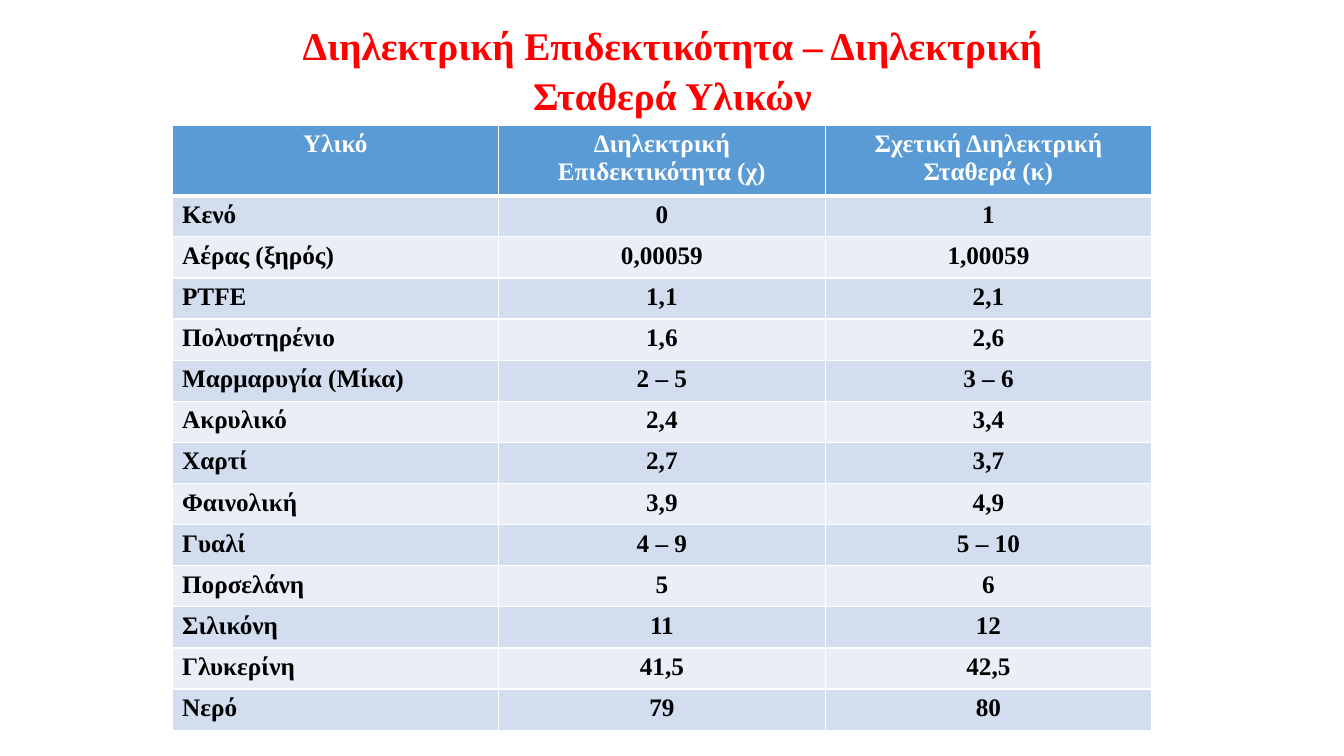
from lxml.etree import SubElement
from pptx import Presentation
from pptx.dml.color import RGBColor
from pptx.enum.text import PP_ALIGN
from pptx.oxml.ns import qn
from pptx.util import Inches, Pt

WIDTH, HEIGHT = Inches(13.33), Inches(7.5)
RED = RGBColor(0xFF, 0x00, 0x00)
BLACK = RGBColor(0x00, 0x00, 0x00)
WHITE = RGBColor(0xFF, 0xFF, 0xFF)
HEADER_BLUE = RGBColor(0x5B, 0x9B, 0xD5)
BANDS = (RGBColor(0xD2, 0xDE, 0xEF), RGBColor(0xEA, 0xEF, 0xF7))

TITLE = "Διηλεκτρική Επιδεκτικότητα – Διηλεκτρική Σταθερά Υλικών"
HEADINGS = ("Υλικό", "Διηλεκτρική Επιδεκτικότητα (χ)", "Σχετική Διηλεκτρική Σταθερά (κ)")
MATERIALS = (
    ("Κενό", "0", "1"),
    ("Αέρας (ξηρός)", "0,00059", "1,00059"),
    ("PTFE", "1,1", "2,1"),
    ("Πολυστηρένιο", "1,6", "2,6"),
    ("Μαρμαρυγία (Μίκα)", "2 – 5", "3 – 6"),
    ("Ακρυλικό", "2,4", "3,4"),
    ("Χαρτί", "2,7", "3,7"),
    ("Φαινολική", "3,9", "4,9"),
    ("Γυαλί", "4 – 9", "5 – 10"),
    ("Πορσελάνη", "5", "6"),
    ("Σιλικόνη", "11", "12"),
    ("Γλυκερίνη", "41,5", "42,5"),
    ("Νερό", "79", "80"),
)


class SlideBuilder:
    """Holds the style and the slide; lengths are percentages of the slide."""

    font_name = "Times New Roman"
    title_size, table_size = Pt(28), Pt(18)

    def __init__(self, slide):
        self.slide = slide

    def across(self, percent):
        return round(WIDTH * percent / 100)

    def down(self, percent):
        return round(HEIGHT * percent / 100)

    def style_text(self, frame, text, size, color, align):
        frame.text = text
        paragraph = frame.paragraphs[0]
        paragraph.alignment = align
        font = paragraph.runs[0].font
        font.name, font.size, font.bold = self.font_name, size, True
        font.color.rgb = color
        return paragraph

    def title(self, text, left, top, width, height):
        heading = self.slide.shapes.add_textbox(
            self.across(left), self.down(top), self.across(width), self.down(height))
        heading.text_frame.word_wrap = True
        paragraph = self.style_text(
            heading.text_frame, text, self.title_size, RED, PP_ALIGN.CENTER)
        paragraph.line_spacing = 1.07

    def borders(self, cell, bottom):
        properties = cell._tc.get_or_add_tcPr()
        sides = (("a:lnL", 1), ("a:lnR", 1), ("a:lnT", 1), ("a:lnB", bottom))
        for position, (side, points) in enumerate(sides):
            line = SubElement(properties, qn(side), w=str(Pt(points)))
            SubElement(SubElement(line, qn("a:solidFill")), qn("a:srgbClr"), val=str(WHITE))
            properties.insert(position, line)

    def table(self, headings, records, left, top, width, header_height, row_height):
        rows = (headings, *records)
        height = header_height + row_height * len(records)
        grid = self.slide.shapes.add_table(
            len(rows), len(headings), self.across(left), self.down(top),
            self.across(width), self.down(height)).table
        for r, values in enumerate(rows):
            is_header = r == 0
            grid.rows[r].height = self.down(header_height if is_header else row_height)
            for c, value in enumerate(values):
                cell = grid.cell(r, c)
                cell.fill.solid()
                cell.fill.fore_color.rgb = HEADER_BLUE if is_header else BANDS[(r - 1) % 2]
                self.borders(cell, bottom=3 if is_header else 1)
                align = PP_ALIGN.CENTER if is_header or c else PP_ALIGN.LEFT
                self.style_text(cell.text_frame, value, self.table_size,
                                WHITE if is_header else BLACK, align)


def main():
    deck = Presentation()
    deck.slide_width, deck.slide_height = WIDTH, HEIGHT
    builder = SlideBuilder(deck.slides.add_slide(deck.slide_layouts[6]))

    # Title
    builder.title(TITLE, left=16.28, top=1.73, width=67.5, height=12.53)

    # Susceptibility and relative constant of each material
    builder.table(HEADINGS, MATERIALS, left=12.8, top=16.55, width=72.9,
                  header_height=8.75, row_height=5.44)

    deck.save("out.pptx")


if __name__ == "__main__":
    main()
